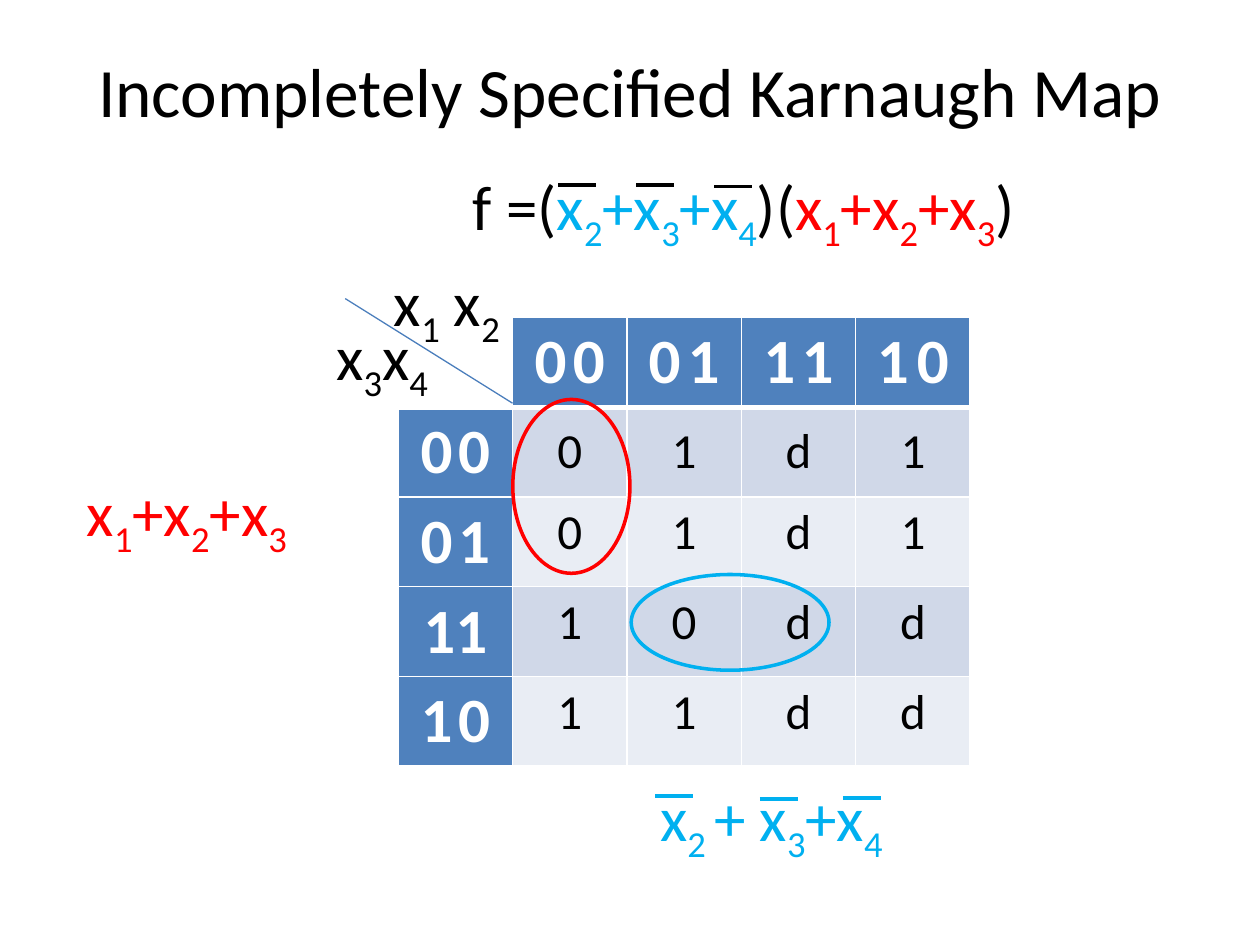
import lxml.etree
import pptx
import pptx.dml.color
import pptx.enum.shapes
import pptx.enum.text
import pptx.oxml.ns
import pptx.util

RGB = pptx.dml.color.RGBColor.from_string
Pt = pptx.util.Pt
qn = pptx.oxml.ns.qn
ALIGN = pptx.enum.text.PP_ALIGN
ANCHOR = pptx.enum.text.MSO_ANCHOR

THEME = {
    "font": "Calibri", "title": 39.6, "formula": 36, "heading": 36, "value": 28,
    "black": "000000", "white": "FFFFFF", "red": "FF0000", "cyan": "00B0F0",
    "header": "4F81BD", "bands": ("D0D8E8", "E9EDF4"), "diagonal": "4B7EBC",
}

deck = pptx.Presentation()
deck.slide_width, deck.slide_height = pptx.util.Inches(10), pptx.util.Inches(7.5)
slide = deck.slides.add_slide(deck.slide_layouts[5])

# Layout grid: 100 columns by 75 rows of square units
UNIT = deck.slide_width / 100
MAP_LEFT, MAP_TOP, MAP_COL, MAP_ROW = 31.6, 25.2, 9.08, 7.0


def add_run(paragraph, text, size, colour, bold=False, subscript=False):
    run = paragraph.add_run()
    run.text = text
    for name, value in {"name": THEME["font"], "size": Pt(size), "bold": bold}.items():
        setattr(run.font, name, value)
    run.font.color.rgb = RGB(THEME[colour])
    if subscript:
        run._r.get_or_add_rPr().set("baseline", "-25000")


def add_rule(start, end, colour, width):
    ends = [round(n * UNIT) for n in (*start, *end)]
    rule = slide.shapes.add_connector(pptx.enum.shapes.MSO_CONNECTOR.STRAIGHT, *ends)
    rule.line.color.rgb = RGB(THEME[colour])
    rule.line.width = Pt(width)
    lxml.etree.SubElement(rule._element.spPr, qn("a:effectLst"))


# Title
title = slide.shapes.title
for name, units in {"left": 5, "top": 2, "width": 90, "height": 10.2}.items():
    setattr(title, name, round(units * UNIT))
title.text_frame.vertical_anchor = ANCHOR.MIDDLE
title_line = title.text_frame.paragraphs[0]
title_line.alignment = ALIGN.CENTER
add_run(title_line, "Incompletely Specified Karnaugh Map", THEME["title"], "black")

# Karnaugh map: each heading is (digits, size of the gap between them)
column_headings = [("00", 16), ("01", 18), ("11", 16), ("10", 20)]
row_headings = [("00", 14), ("01", 14), ("11", None), ("10", 14)]
minterms = ["01d1", "01d1", "10dd", "11dd"]

bounds = [round(n * UNIT) for n in (MAP_LEFT, MAP_TOP, MAP_COL * 5, MAP_ROW * 5)]
karnaugh = slide.shapes.add_table(5, 5, *bounds).table
for row in range(5):
    for col in range(5):
        cell = karnaugh.cell(row, col)
        line = cell.text_frame.paragraphs[0]
        line.alignment = ALIGN.CENTER
        cell.vertical_anchor = ANCHOR.MIDDLE if row < 2 or col == 0 else ANCHOR.TOP

        # White borders, heavier under the column headings
        properties = cell._tc.get_or_add_tcPr()
        for side in "LRTB":
            heavy = (row, side) in ((0, "B"), (1, "T"))
            border = lxml.etree.SubElement(properties, qn("a:ln" + side),
                                           w=str(Pt(3 if heavy else 1)))
            paint = lxml.etree.SubElement(border, qn("a:solidFill"))
            lxml.etree.SubElement(paint, qn("a:srgbClr"), val=THEME["white"])

        cell.fill.solid()
        if row == 0 and col == 0:
            cell.fill.fore_color.rgb = RGB(THEME["white"])
        elif row == 0 or col == 0:
            cell.fill.fore_color.rgb = RGB(THEME["header"])
            digits, gap = column_headings[col - 1] if row == 0 else row_headings[row - 1]
            pieces = [(digits, THEME["heading"])]
            if gap:
                pieces = [(digits[0], THEME["heading"]), (" ", gap),
                          (digits[1], THEME["heading"])]
            for text, size in pieces:
                add_run(line, text, size, "white", bold=True)
        else:
            cell.fill.fore_color.rgb = RGB(THEME["bands"][(row - 1) % 2])
            add_run(line, minterms[row - 1][col - 1], THEME["value"], "black")

# Diagonal between the two variable labels
add_rule((MAP_LEFT + MAP_COL, 32), (27.4, 23.7), "diagonal", 0.75)

# Formulas: left, top, width, left inset, parts; "|" switches subscript on and off
formulas = [
    (28, 20.4, 13.3, 3.27, [("x|1| x|2", "black")]),
    (25.7, 24.7, 11.9, 1, [("x|3|x|4", "black")]),
    (5.9, 37.1, 21.1, 1, [("x|1|+x|2|+x|3", "red")]),
    (35.4, 12.8, 64.6, 2.13, [("f =(", "black"), ("x|2|+x|3|+x|4", "cyan"),
                              (")(", "black"), ("x|1|+x|2|+x|3", "red"), (")", "black")]),
    (51.4, 61.3, 20.8, 1, [("x|2 |+ x|3|+x|4", "cyan")]),
]
for left, top, width, inset, parts in formulas:
    box = slide.shapes.add_textbox(*[round(n * UNIT) for n in (left, top, width, 7.1)])
    box.text_frame.word_wrap = False
    box.text_frame.margin_left = round(inset * UNIT)
    for markup, colour in parts:
        for index, text in enumerate(markup.split("|")):
            add_run(box.text_frame.paragraphs[0], text, THEME["formula"], colour,
                    subscript=index % 2 == 1)

# Complement bars over the variables
bars = [(44.3, 14.7, "black"), (50.5, 14.7, "black"), (56.7, 14.8, "black"),
        (52, 63.2, "cyan"), (60.3, 63.4, "cyan"), (66.9, 63.3, "cyan")]
for left, top, colour in bars:
    add_rule((left, top), (left + 3, top), colour, 2.25)

# Rings around the grouped zeros
rings = [(50.1, 45.6, 15.7, 7.6, "cyan"), (40.7, 31.7, 9.3, 13.8, "red")]
for *place, colour in rings:
    ring = slide.shapes.add_shape(pptx.enum.shapes.MSO_SHAPE.OVAL,
                                  *[round(n * UNIT) for n in place])
    ring.shadow.inherit = False
    ring.fill.background()
    ring.line.color.rgb = RGB(THEME[colour])
    ring.line.width = Pt(2)

deck.save("out.pptx")
